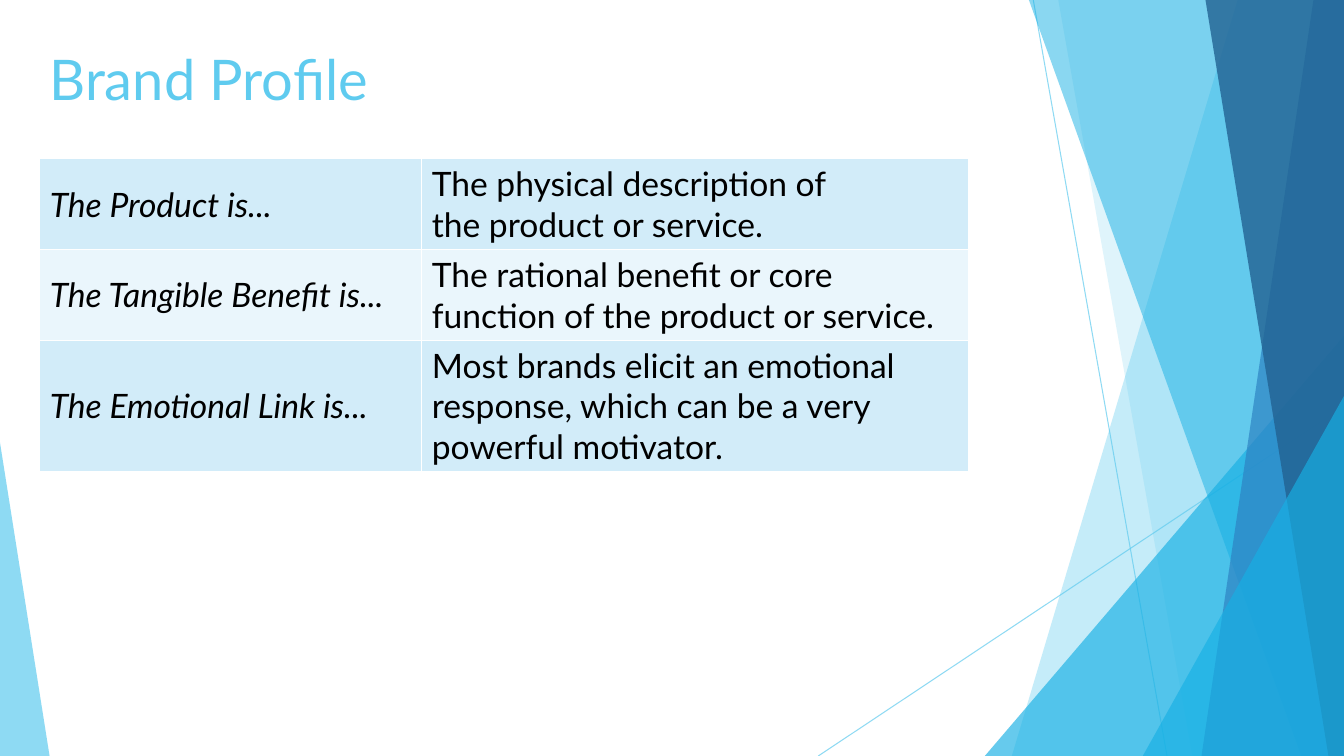
from lxml.etree import SubElement
from pptx import Presentation
from pptx.dml.color import RGBColor
from pptx.enum.shapes import MSO_CONNECTOR, MSO_SHAPE
from pptx.enum.text import MSO_ANCHOR
from pptx.oxml.ns import qn
from pptx.util import Cm, Pt

WIDTH, HEIGHT = 33.87, 19.05
FONT = "Lato"
SKY, AZURE, BLUE, NAVY = "5FCBEF", "17B0E4", "2E83C3", "226292"
PROFILE = [
    ("The Product is...", "The physical description of\vthe product or service."),
    ("The Tangible Benefit is...", "The rational benefit or core function of the product or service."),
    ("The Emotional Link is...", "Most brands elicit an emotional response, which can be a very powerful motivator."),
]


def color(value):
    return RGBColor.from_string(value)


def set_opacity(shape, percent):
    for element in shape._element.spPr.iter(qn("a:srgbClr")):
        SubElement(element, qn("a:alpha"), val=str(percent * 1000))


def paint(shape, fill, opacity):
    shape.shadow.inherit = False
    shape.fill.solid()
    shape.fill.fore_color.rgb = color(fill)
    shape.line.fill.background()
    set_opacity(shape, opacity)


def add_ray(slide, start_x, start_y, end_x):
    ray = slide.shapes.add_connector(
        MSO_CONNECTOR.STRAIGHT, Cm(start_x), Cm(start_y), Cm(end_x), Cm(HEIGHT))
    ray.line.color.rgb = color(SKY)
    ray.line.width = Pt(0.75)
    set_opacity(ray, 70)
    SubElement(ray._element.spPr, qn("a:effectLst"))


def add_band(slide, top_x, bottom_x, fill, opacity):
    builder = slide.shapes.build_freeform(Cm(top_x), 0)
    corners = [(WIDTH, 0), (WIDTH, HEIGHT), (bottom_x, HEIGHT)]
    builder.add_line_segments([(Cm(x), Cm(y)) for x, y in corners])
    paint(builder.convert_to_shape(), fill, opacity)


def add_triangle(slide, left, top, right, apex, fill, opacity):
    triangle = slide.shapes.add_shape(
        MSO_SHAPE.ISOSCELES_TRIANGLE, Cm(left), Cm(top), Cm(right - left), Cm(HEIGHT - top))
    triangle.adjustments[0] = apex
    paint(triangle, fill, opacity)


def add_background(slide):
    add_ray(slide, 26.04, 0, 29.41)
    add_ray(slide, WIDTH, 10.24, 20.62)
    add_band(slide, 31.19, 25.5, SKY, 36)
    add_band(slide, 26.67, 30.05, SKY, 20)
    add_triangle(slide, 24.82, 8.46, WIDTH, 1, AZURE, 66)
    add_band(slide, 25.93, 32.79, AZURE, 50)
    add_band(slide, 33.1, 30.28, BLUE, 70)
    add_band(slide, 30.38, 33.48, NAVY, 80)
    add_triangle(slide, 28.8, 9.98, WIDTH, 1, AZURE, 66)
    add_triangle(slide, 0, 11.15, 1.25, 0, SKY, 70)


def set_font(paragraph, size, value, italic=False):
    paragraph.font.name = FONT
    paragraph.font.size = Pt(size)
    paragraph.font.color.rgb = color(value)
    paragraph.font.italic = italic


def add_title(slide, text):
    title = slide.shapes.add_textbox(Cm(1), Cm(1), Cm(19.05), Cm(3.18))
    title.text_frame.word_wrap = True
    title.text_frame.text = text
    set_font(title.text_frame.paragraphs[0], 40, SKY)


def add_borders(cell):
    properties = cell._tc.get_or_add_tcPr()
    for side in ("lnL", "lnR", "lnT", "lnB"):
        border = SubElement(properties, qn(f"a:{side}"), w=str(Pt(1)))
        fill = SubElement(border, qn("a:solidFill"))
        SubElement(fill, qn("a:srgbClr"), val="FFFFFF")


def fill_cell(cell, text, fill, italic):
    add_borders(cell)
    cell.fill.solid()
    cell.fill.fore_color.rgb = color(fill)
    cell.vertical_anchor = MSO_ANCHOR.MIDDLE
    cell.text_frame.text = text
    set_font(cell.text_frame.paragraphs[0], 24, "000000", italic)


def add_profile_table(slide):
    widths, heights = (9.63, 13.79), (2.29, 2.29, 3.28)
    table = slide.shapes.add_table(
        len(heights), len(widths), Cm(1), Cm(4), Cm(sum(widths)), Cm(sum(heights))).table
    table.first_row = False
    table.horz_banding = False
    for column, width in zip(table.columns, widths):
        column.width = Cm(width)
    for index, (row, height) in enumerate(zip(table.rows, heights)):
        row.height = Cm(height)
        fill = ("D2ECF9", "EAF6FC")[index % 2]
        for position, text in enumerate(PROFILE[index]):
            fill_cell(table.cell(index, position), text, fill, position == 0)


def main():
    presentation = Presentation()
    presentation.slide_width = Cm(WIDTH)
    presentation.slide_height = Cm(HEIGHT)
    slide = presentation.slides.add_slide(presentation.slide_layouts[6])
    add_background(slide)
    add_title(slide, "Brand Profile")
    add_profile_table(slide)
    presentation.save("out.pptx")


if __name__ == "__main__":
    main()
